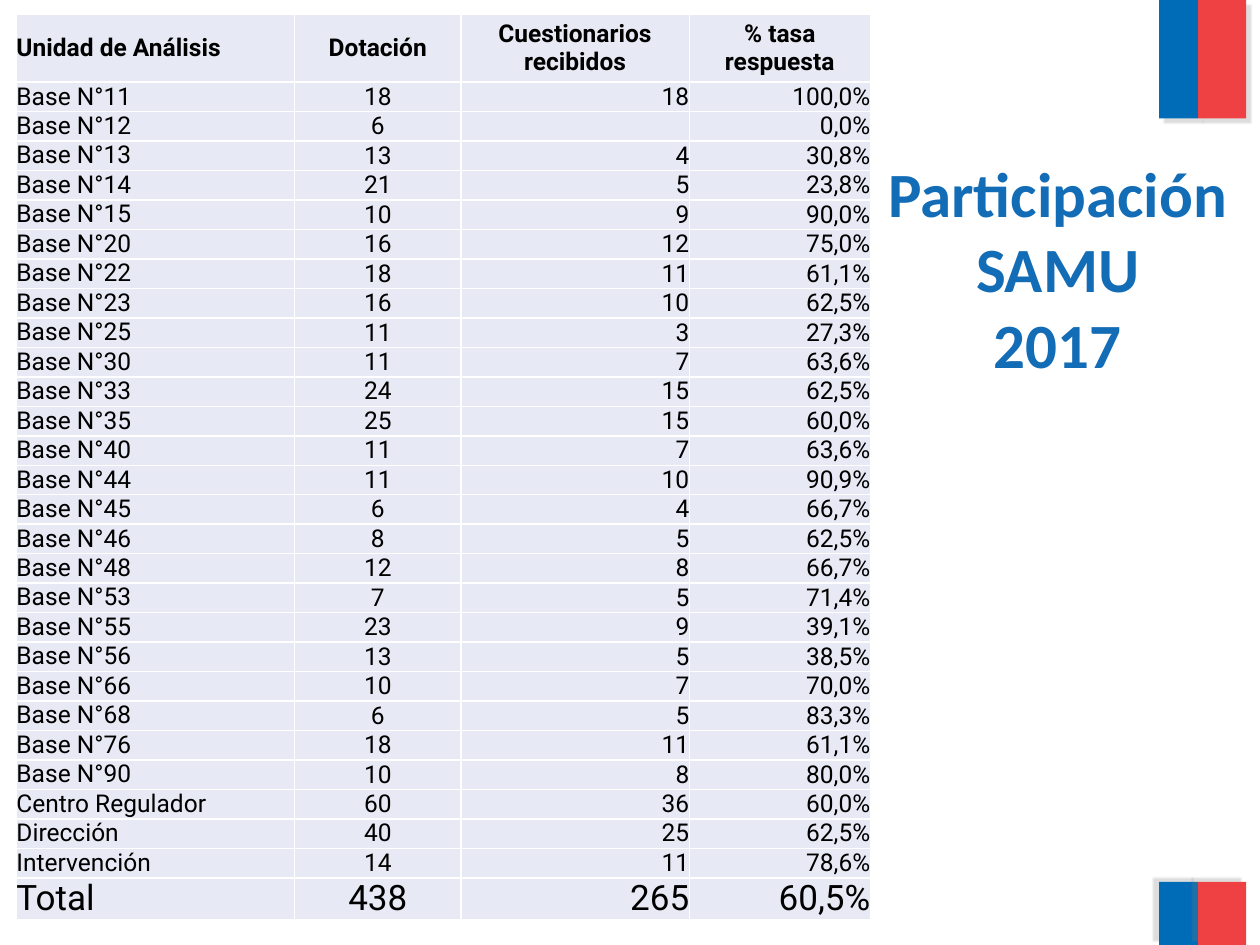
from lxml import etree
from pptx import Presentation
from pptx.dml.color import RGBColor
from pptx.enum.shapes import MSO_SHAPE
from pptx.enum.text import MSO_ANCHOR, PP_ALIGN
from pptx.oxml.ns import qn
from pptx.util import Pt

RECTANGLE = MSO_SHAPE.RECTANGLE
TOP, MIDDLE = MSO_ANCHOR.TOP, MSO_ANCHOR.MIDDLE
LEFT, CENTER, RIGHT = PP_ALIGN.LEFT, PP_ALIGN.CENTER, PP_ALIGN.RIGHT

BLUE = RGBColor(0x00, 0x6C, 0xB7)
RED = RGBColor(0xEF, 0x41, 0x44)
TITLE_BLUE = RGBColor(0x13, 0x6C, 0xB6)
CELL_FILL = RGBColor(0xE7, 0xEA, 0xF4)
WHITE = RGBColor(0xFF, 0xFF, 0xFF)
BLACK = RGBColor(0x00, 0x00, 0x00)
SHADOW_GREY = RGBColor(0x80, 0x80, 0x80)

HEADERS = ("Unidad de Análisis\u00a0".replace("\u00a0", " ").strip(), "Dotación",
           "Cuestionarios recibidos", "% tasa respuesta")
UNITS = [
    ("Base N°11", "18", "18", "100,0%"),
    ("Base N°12", "6", "", "0,0%"),
    ("Base N°13", "13", "4", "30,8%"),
    ("Base N°14", "21", "5", "23,8%"),
    ("Base N°15", "10", "9", "90,0%"),
    ("Base N°20", "16", "12", "75,0%"),
    ("Base N°22", "18", "11", "61,1%"),
    ("Base N°23", "16", "10", "62,5%"),
    ("Base N°25", "11", "3", "27,3%"),
    ("Base N°30", "11", "7", "63,6%"),
    ("Base N°33", "24", "15", "62,5%"),
    ("Base N°35", "25", "15", "60,0%"),
    ("Base N°40", "11", "7", "63,6%"),
    ("Base N°44", "11", "10", "90,9%"),
    ("Base N°45", "6", "4", "66,7%"),
    ("Base N°46", "8", "5", "62,5%"),
    ("Base N°48", "12", "8", "66,7%"),
    ("Base N°53", "7", "5", "71,4%"),
    ("Base N°55", "23", "9", "39,1%"),
    ("Base N°56", "13", "5", "38,5%"),
    ("Base N°66", "10", "7", "70,0%"),
    ("Base N°68", "6", "5", "83,3%"),
    ("Base N°76", "18", "11", "61,1%"),
    ("Base N°90", "10", "8", "80,0%"),
    ("Centro Regulador", "60", "36", "60,0%"),
    ("Dirección", "40", "25", "62,5%"),
    ("Intervención", "14", "11", "78,6%"),
]
TOTAL = ("Total", "438", "265", "60,5%")
ROWS = [HEADERS, *UNITS, TOTAL]
COLUMN_WIDTHS = (159, 95, 130.5, 103.5)
ROW_HEIGHTS = [39] + [16.8] * len(UNITS) + [23]
ALIGNMENTS = (LEFT, CENTER, RIGHT, RIGHT)


def add_shadow(shape, degrees):
    """Give the shape a soft grey shadow cast in the given direction."""
    effects = etree.SubElement(shape._element.spPr, qn("a:effectLst"))
    shadow = etree.SubElement(effects, qn("a:outerShdw"), blurRad=str(Pt(1)),
                              dist=str(Pt(4)), dir=str(degrees * 60000),
                              algn="ctr", rotWithShape="0")
    color = etree.SubElement(shadow, qn("a:srgbClr"), val=str(SHADOW_GREY))
    etree.SubElement(color, qn("a:alpha"), val="25000")


def add_borders(cell):
    properties = cell._tc.get_or_add_tcPr()
    for side in ("a:lnL", "a:lnR", "a:lnT", "a:lnB"):
        line = etree.SubElement(properties, qn(side), w=str(Pt(1)))
        fill = etree.SubElement(line, qn("a:solidFill"))
        etree.SubElement(fill, qn("a:srgbClr"), val=str(WHITE))


presentation = Presentation()
presentation.slide_width, presentation.slide_height = Pt(720), Pt(540)
slide = presentation.slides.add_slide(presentation.slide_layouts[6])

# Flag bands in the two right corners
for top, height, shadow_direction in ((0, 67.7), (504, 36)) and (
        (0, 67.7, 45), (504, 36, 215)):
    for left, width, color in ((662.4, 22.3, BLUE), (684.7, 27.4, RED)):
        band = slide.shapes.add_shape(RECTANGLE, Pt(left), Pt(top), Pt(width), Pt(height))
        band.fill.solid()
        band.fill.fore_color.rgb = color
        band.line.fill.background()
        add_shadow(band, shadow_direction)

# Title
title = slide.shapes.add_textbox(Pt(498.2), Pt(77), Pt(212.4), Pt(152))
frame = title.text_frame
frame.word_wrap = True
frame.vertical_anchor = MIDDLE
frame.margin_left = frame.margin_right = frame.margin_top = frame.margin_bottom = Pt(3.6)
frame.text = "Participación\vSAMU\v2017"
paragraph = frame.paragraphs[0]
paragraph.alignment = CENTER
paragraph.font.name = "Calibri"
paragraph.font.size = Pt(36)
paragraph.font.bold = True
paragraph.font.color.rgb = TITLE_BLUE

# Participation table
table = slide.shapes.add_table(len(ROWS), len(HEADERS), Pt(9.4), Pt(8),
                               Pt(sum(COLUMN_WIDTHS)), Pt(sum(ROW_HEIGHTS))).table
table.horz_banding = False
for column, width in zip(table.columns, COLUMN_WIDTHS):
    column.width = Pt(width)
for row, height, values in zip(table.rows, ROW_HEIGHTS, ROWS):
    row.height = Pt(height)
    is_header = values is HEADERS
    size = Pt(20) if values is TOTAL else Pt(14)
    for index, (cell, value) in enumerate(zip(row.cells, values)):
        add_borders(cell)
        cell.fill.solid()
        cell.fill.fore_color.rgb = CELL_FILL
        cell.margin_left = cell.margin_right = cell.margin_top = cell.margin_bottom = 0
        cell.vertical_anchor = TOP if index == 0 and not is_header else MIDDLE
        cell.text = value
        paragraph = cell.text_frame.paragraphs[0]
        paragraph.alignment = CENTER if is_header and index > 0 else ALIGNMENTS[index]
        paragraph.font.name = "Roboto"
        paragraph.font.size = size
        paragraph.font.bold = is_header
        paragraph.font.color.rgb = BLACK
        if not value:
            # An empty cell takes its line height from the end mark
            etree.SubElement(paragraph._p, qn("a:endParaRPr"), sz=str(int(size.pt * 100)))

presentation.save("out.pptx")
